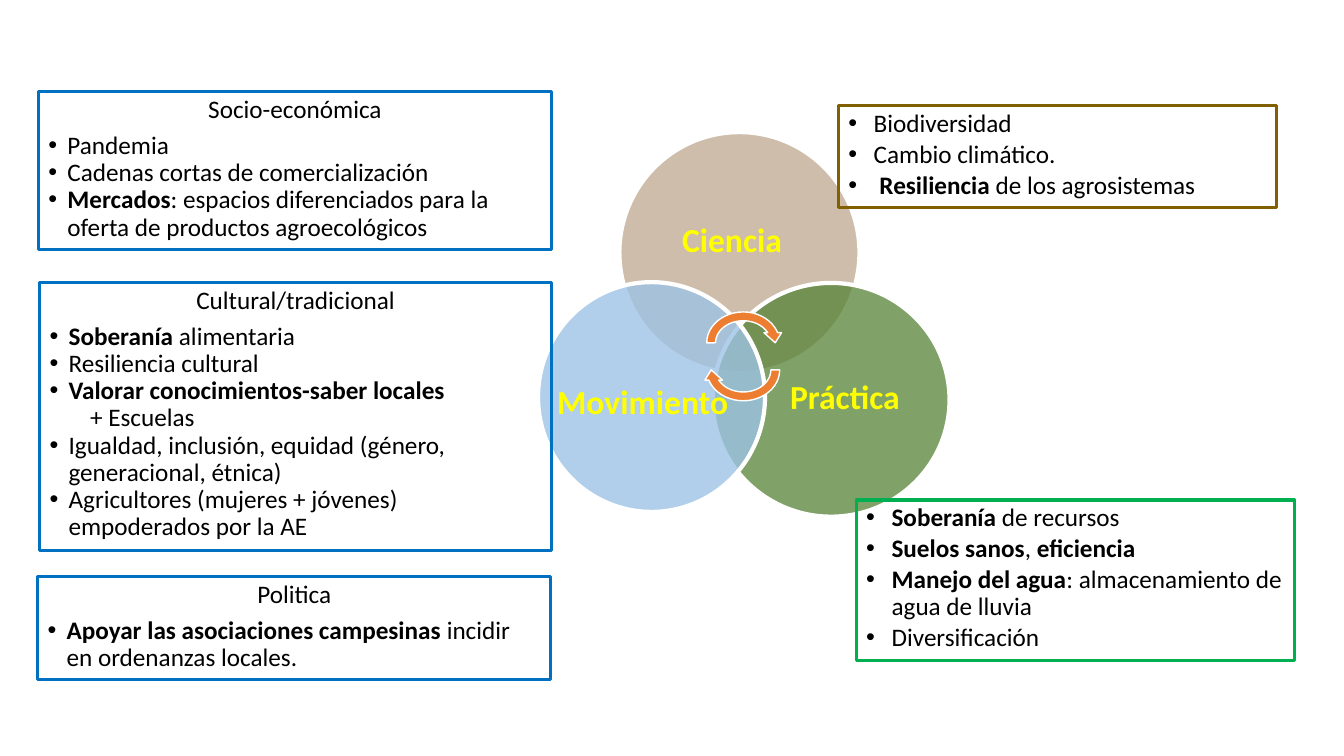
import pptx
import pptx.dml.color
import pptx.enum.shapes
import pptx.enum.text
import pptx.oxml.ns
import pptx.util

Cm = pptx.util.Cm
Pt = pptx.util.Pt
MSO_SHAPE = pptx.enum.shapes.MSO_SHAPE
PP_ALIGN = pptx.enum.text.PP_ALIGN
MSO_ANCHOR = pptx.enum.text.MSO_ANCHOR
qn = pptx.oxml.ns.qn

COLORS = {
    "tan": "A2825E", "leaf": "548235", "sky": "9DC3E6", "arrow": "ED7D31",
    "white": "FFFFFF", "label": "FFFF00", "text": "000000",
    "blue": "0070C0", "green": "00B050", "brown": "806000",
}
FONT = "Calibri"

CIRCLES = [
    ("Ciencia", "tan", 52, (2.05, 0, 6.05, 6.07), (3.38, 2.05, 3.05)),
    ("Práctica", "leaf", 74, (4.4, 3.8, 5.97, 5.89), (6.1, 6.02, 3.32)),
    ("Movimiento", "sky", 79, (0, 3.78, 5.72, 5.79), (0.23, 6.14, 4.88)),
]
ARROWS = [(4.42, 0), (5.1, 180)]

TITLED_PANELS = [
    ((0.97, 2.31, 12.93, 3.98), "Socio-económica", [
        "Pandemia",
        "Cadenas cortas de comercialización",
        "**Mercados**: espacios diferenciados para la oferta de productos agroecológicos",
    ]),
    ((1, 7.12, 12.9, 6.76), "Cultural/tradicional", [
        "**Soberanía** alimentaria",
        "Resiliencia cultural",
        "**Valorar conocimientos-saber locales**",
        "+ Escuelas",
        "Igualdad, inclusión, equidad (género, generacional, étnica)",
        "Agricultores (mujeres + jóvenes) empoderados por la AE",
    ]),
    ((0.95, 14.53, 12.93, 2.6), "Politica", [
        "**Apoyar las asociaciones campesinas **incidir en ordenanzas locales.",
    ]),
]
LIST_PANELS = [
    ((21.58, 12.6, 11.05, 4.05), "green", [
        "**Soberanía **de recursos",
        "**Suelos sanos**, **eficiencia**",
        "**Manejo del agua**: almacenamiento de agua de lluvia",
        "Diversificación",
    ]),
    ((21.13, 2.67, 11.05, 2.57), "brown", [
        "Biodiversidad",
        "Cambio climático.",
        " **Resiliencia **de los agrosistemas",
    ]),
]


def rgb(name):
    return pptx.dml.color.RGBColor.from_string(COLORS[name])


def add_outlined(slide, kind, box, line, width, fill=None, opacity=100):
    sp = slide.shapes.add_shape(kind, *(Cm(v) for v in box))
    sp.shadow.inherit = False
    sp.line.color.rgb = rgb(line)
    sp.line.width = Pt(width)
    if fill is None:
        sp.fill.background()
        return sp
    sp.fill.solid()
    sp.fill.fore_color.rgb = rgb(fill)
    if opacity < 100:
        clr = sp.element.spPr.find(qn("a:solidFill"))[0]
        clr.append(clr.makeelement(qn("a:alpha"), {"val": str(opacity * 1000)}))
    return sp


def style_run(r, size, color, bold):
    r.font.name = FONT
    r.font.size = Pt(size)
    r.font.bold = bold
    r.font.color.rgb = rgb(color)


def add_paragraph(tf, text, after=0, align=PP_ALIGN.LEFT, margin=0, bullet=False):
    p = tf.paragraphs[0]
    if p.runs:
        p = tf.add_paragraph()
    p.alignment = align
    p.line_spacing = 0.9
    p.space_before = Pt(0)
    p.space_after = Pt(after)
    for i, part in enumerate(text.split("**")):
        if part:
            r = p.add_run()
            r.text = part
            style_run(r, 18, "text", i % 2 == 1)
    pPr = p._p.get_or_add_pPr()
    pPr.set("marL", str(Cm(margin)))
    pPr.set("indent", str(-Cm(margin) if bullet else 0))
    if bullet:
        pPr.append(pPr.makeelement(qn("a:buFont"), {"typeface": "Arial"}))
        pPr.append(pPr.makeelement(qn("a:buChar"), {"char": "•"}))
    else:
        pPr.append(pPr.makeelement(qn("a:buNone"), {}))


def add_panel(slide, box, line):
    sp = add_outlined(slide, MSO_SHAPE.RECTANGLE, box, line, 2.25)
    tf = sp.text_frame
    tf.word_wrap = True
    tf.vertical_anchor = MSO_ANCHOR.TOP
    return tf


def add_titled_panel(slide, box, title, items):
    tf = add_panel(slide, box, "blue")
    add_paragraph(tf, title, after=6.3, align=PP_ALIGN.CENTER)
    for item in items:
        bullet = not item.startswith("+")
        add_paragraph(tf, item, margin=0.48 if bullet else 1.02, bullet=bullet)


def add_list_panel(slide, box, line, items):
    tf = add_panel(slide, box, line)
    for item in items:
        add_paragraph(tf, item, after=2.7, margin=0.64, bullet=True)


def add_venn(slide, left, top):
    for name, fill, opacity, (x, y, w, h), (lx, ly, lw) in CIRCLES:
        add_outlined(slide, MSO_SHAPE.OVAL, (left + x, top + y, w, h),
                     "white", 3, fill, opacity)
        tb = slide.shapes.add_textbox(Cm(left + lx), Cm(top + ly), Cm(lw), Cm(1.27))
        tf = tb.text_frame
        tf.word_wrap = False
        tf.text = name
        style_run(tf.paragraphs[0].runs[0], 24, "label", True)
    for y, rotation in ARROWS:
        sp = add_outlined(slide, MSO_SHAPE.CIRCULAR_ARROW,
                          (left + 4.14, top + y, 2.06, 1.78), "white", 1, "arrow")
        sp.rotation = rotation


def main():
    prs = pptx.Presentation()
    prs.slide_width = Cm(33.87)
    prs.slide_height = Cm(19.05)
    slide = prs.slides.add_slide(prs.slide_layouts[6])
    add_venn(slide, 13.56, 3.33)
    for box, title, items in TITLED_PANELS:
        add_titled_panel(slide, box, title, items)
    for box, line, items in LIST_PANELS:
        add_list_panel(slide, box, line, items)
    prs.save("out.pptx")


if __name__ == "__main__":
    main()
